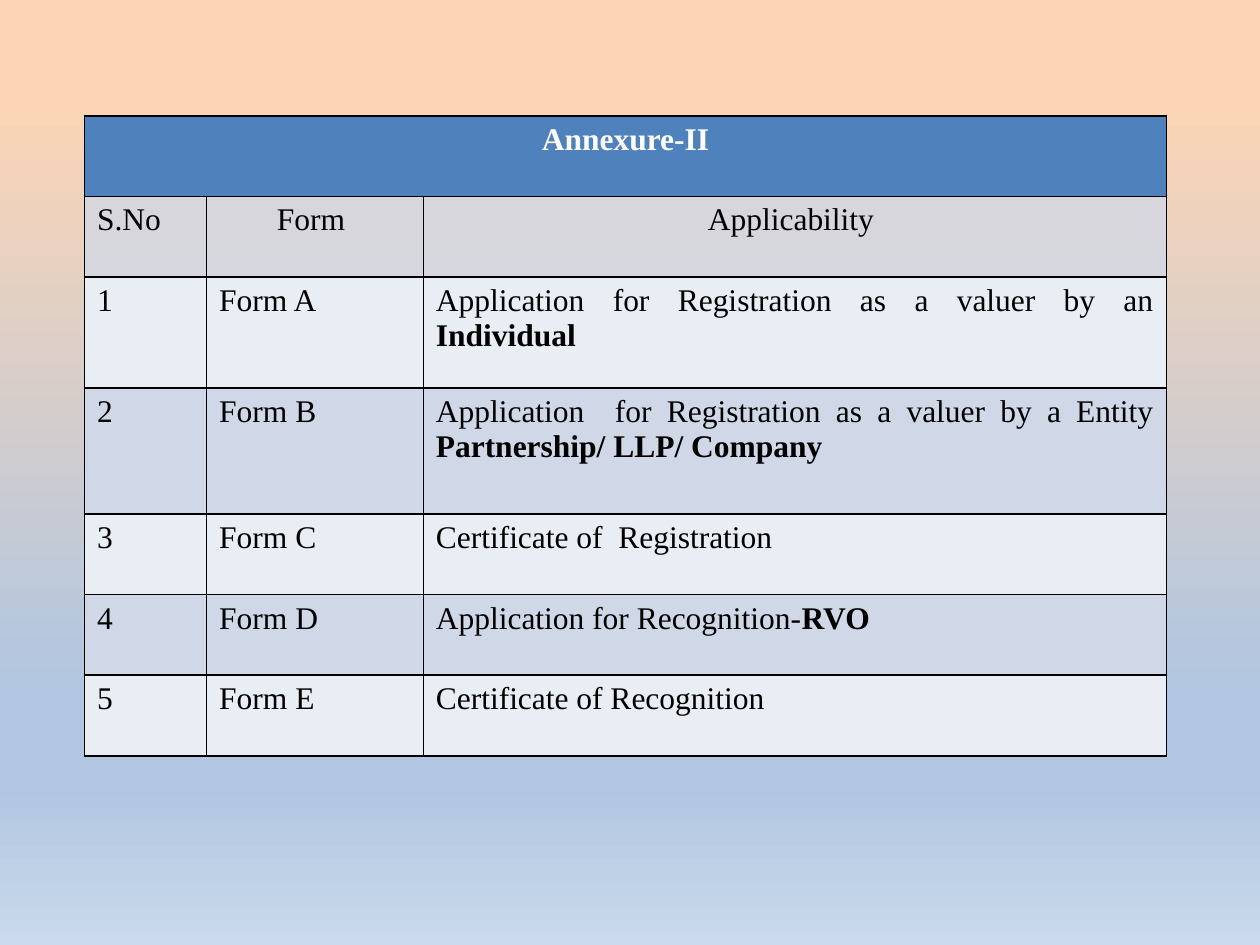
from lxml import etree
from pptx import Presentation
from pptx.dml.color import RGBColor
from pptx.enum.text import PP_ALIGN
from pptx.oxml.ns import qn
from pptx.util import Inches, Pt

LEFT, CENTER, JUSTIFY = PP_ALIGN.LEFT, PP_ALIGN.CENTER, PP_ALIGN.JUSTIFY
FONT, SIZE = "Times New Roman", 18
BLACK, WHITE, BLUE = "000000", "FFFFFF", "4F81BD"
BANDS = ("E9EDF4", "D0D8E8")
STOPS = ((10, "FCD5B5"), (74, "B0C6E1"), (83, "B0C6E1"), (100, "CAD9EB"))
COLS = (0.97, 1.72, 5.9)
ROWS = (0.64, 0.64, 0.88, 1, 0.64, 0.64, 0.64)
HEADINGS = ("S.No", "Form ", "Applicability ")
FORMS = (
    ("Form A", "Application for Registration as a valuer by an ", "Individual "),
    ("Form B", "Application  for Registration as a valuer by a Entity ",
     "Partnership/ LLP/ Company"),
    ("Form C", "Certificate of  Registration ", ""),
    ("Form D", "Application for Recognition-", "RVO"),
    ("Form E", "Certificate of Recognition", ""),
)


def rgb(value):
    """Turn a hex string into a colour."""
    return RGBColor.from_string(value)


def add_xml_color(parent, value):
    """Append a hex colour element to an XML parent."""
    return etree.SubElement(parent, qn("a:srgbClr"), val=value)


def paint_background(s):
    """Fill the slide from peach at the top to pale blue at the bottom."""
    fill = s.background.fill
    fill.gradient()
    fill.gradient_angle = 270
    stops = next(s.element.iter(qn("a:gsLst")))
    for stop in list(stops):
        stops.remove(stop)
    for share, value in STOPS:
        add_xml_color(etree.SubElement(stops, qn("a:gs"), pos=str(share * 1000)), value)


def style_cell(cell, fill, alpha=100):
    """Give a cell its fill and thin black borders."""
    cell.fill.solid()
    cell.fill.fore_color.rgb = rgb(fill)
    tc_pr = cell._tc.get_or_add_tcPr()
    if alpha < 100:
        color = next(tc_pr.iter(qn("a:srgbClr")))
        etree.SubElement(color, qn("a:alpha"), val=str(alpha * 1000))
    for i, side in enumerate(("lnL", "lnR", "lnT", "lnB")):
        line = etree.Element(qn(f"a:{side}"), w=str(Pt(1)))
        add_xml_color(etree.SubElement(line, qn("a:solidFill")), BLACK)
        tc_pr.insert(i, line)


def write_cell(cell, text, align=LEFT, color=BLACK, bold=False, strong=""):
    """Write a paragraph, with an optional bold ending."""
    p = cell.text_frame.paragraphs[0]
    p.text = text
    p.alignment = align
    p.runs[0].font.bold = bold
    if strong:
        r = p.add_run()
        r.text = strong
        r.font.bold = True
    for r in p.runs:
        r.font.name, r.font.size = FONT, Pt(SIZE)
        r.font.color.rgb = rgb(color)


def add_forms_table(s, x, y):
    """Place the table of forms with its top left corner at x, y."""
    table = s.shapes.add_table(len(ROWS), len(COLS), Inches(x), Inches(y),
                               Inches(sum(COLS)), Inches(sum(ROWS))).table
    for col, width in zip(table.columns, COLS):
        col.width = Inches(width)
    for row, height in zip(table.rows, ROWS):
        row.height = Inches(height)

    for c, heading in enumerate(HEADINGS):
        style_cell(table.cell(0, c), BLUE)
        style_cell(table.cell(1, c), BANDS[1], 75)
        write_cell(table.cell(1, c), heading, CENTER if c else LEFT)
    table.cell(0, 0).merge(table.cell(0, len(COLS) - 1))
    write_cell(table.cell(0, 0), "Annexure-II", CENTER, WHITE, True)

    for n, (form, use, strong) in enumerate(FORMS, 1):
        number, name, applicability = table.rows[n + 1].cells
        for cell in (number, name, applicability):
            style_cell(cell, BANDS[(n - 1) % 2])
        write_cell(number, str(n))
        write_cell(name, form)
        write_cell(applicability, use, JUSTIFY, strong=strong)


def main():
    """Build and save the slide."""
    prs = Presentation()
    prs.slide_width, prs.slide_height = Inches(10), Inches(7.5)
    s = prs.slides.add_slide(prs.slide_layouts[6])
    paint_background(s)
    add_forms_table(s, 0.67, 0.92)
    prs.save("out.pptx")


if __name__ == "__main__":
    main()
